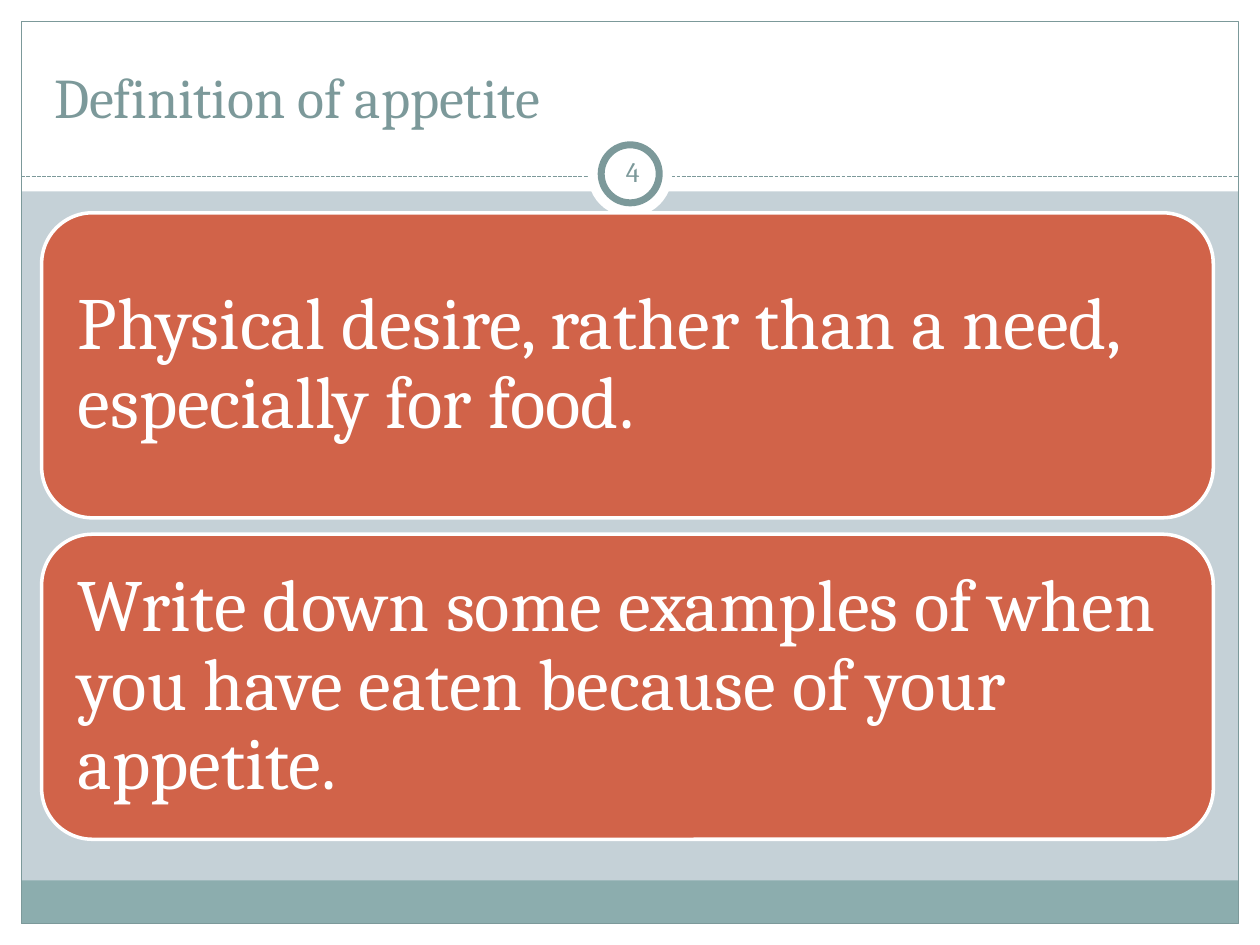
from lxml import etree
from pptx import Presentation
from pptx.dml.color import RGBColor
from pptx.enum.dml import MSO_LINE
from pptx.enum.shapes import MSO_CONNECTOR, MSO_SHAPE
from pptx.enum.text import MSO_ANCHOR, MSO_AUTO_SIZE, PP_ALIGN
from pptx.oxml.ns import qn
from pptx.util import Cm, Pt

RECT, OVAL, ROUNDED = MSO_SHAPE.RECTANGLE, MSO_SHAPE.OVAL, MSO_SHAPE.ROUNDED_RECTANGLE
LEFT, CENTER = PP_ALIGN.LEFT, PP_ALIGN.CENTER
MIDDLE, BOTTOM = MSO_ANCHOR.MIDDLE, MSO_ANCHOR.BOTTOM

FONT = "Cambria"
COLORS = {
    "background": "C5D1D7",
    "white": "FFFFFF",
    "teal": "7C999A",
    "footer": "8CADAE",
    "card": "D16349",
}
WIDTH, HEIGHT, MARGIN = 25.4, 19.05, 0.43
CARD_TOP, CARD_HEIGHT, CARD_PITCH = 4.29, 6.15, 6.48
CARDS = [
    "Physical desire, rather than a need, especially for food.",
    "Write down some examples of when you have eaten because of your appetite.",
]


def color(name):
    return RGBColor.from_string(COLORS[name])


def add_shape(s, kind, x, y, w, h, fill=None, line=None, line_width=0.75):
    sp = s.shapes.add_shape(kind, Cm(x), Cm(y), Cm(w), Cm(h))
    sp.shadow.inherit = False
    if fill:
        sp.fill.solid()
        sp.fill.fore_color.rgb = color(fill)
    else:
        sp.fill.background()
    if line:
        sp.line.color.rgb = color(line)
        sp.line.width = Pt(line_width)
    else:
        sp.line.fill.background()
    return sp


def set_text(sp, text, size, font_color, align=LEFT, anchor=MIDDLE,
             inset=None, line_spacing=None):
    tf = sp.text_frame
    tf.word_wrap = True
    tf.auto_size = MSO_AUTO_SIZE.NONE
    tf.vertical_anchor = anchor
    if inset is not None:
        tf.margin_left = tf.margin_right = Cm(inset)
        tf.margin_top = tf.margin_bottom = Cm(inset)
    p = tf.paragraphs[0]
    p.alignment = align
    if line_spacing:
        p.line_spacing = line_spacing
    r = p.add_run()
    r.text = text
    r.font.name = FONT
    r.font.size = Pt(size)
    r.font.color.rgb = color(font_color)


def add_dashed_rule(s, y):
    rule = s.shapes.add_connector(
        MSO_CONNECTOR.STRAIGHT, Cm(MARGIN), Cm(y), Cm(WIDTH - MARGIN), Cm(y))
    rule.line.color.rgb = color("teal")
    rule.line.width = Pt(0.75)
    rule.line.dash_style = MSO_LINE.SQUARE_DOT
    etree.SubElement(rule.element.spPr, qn("a:effectLst"))


def add_frame(s):
    """White margins and header, footer band, outline and dashed rule."""
    inner_w = WIDTH - 2 * MARGIN
    for x, y, w, h in [
        (0, HEIGHT - MARGIN, WIDTH, MARGIN),
        (0, 0, WIDTH, 3.86),
        (0, 0, MARGIN, HEIGHT),
        (WIDTH - MARGIN, 0, MARGIN, HEIGHT),
    ]:
        add_shape(s, RECT, x, y, w, h, fill="white")
    add_shape(s, RECT, MARGIN, 17.75, inner_w, 0.87, fill="footer")
    add_shape(s, RECT, MARGIN, MARGIN, inner_w, HEIGHT - 2 * MARGIN, line="teal")
    add_dashed_rule(s, 3.56)


def add_page_badge(s, number):
    add_shape(s, OVAL, 11.85, 2.67, 1.7, 1.7, fill="white")
    add_shape(s, OVAL, 12.12, 2.92, 1.17, 1.17, fill="white", line="teal", line_width=4)
    box = s.shapes.add_textbox(Cm(12.12), Cm(2.84), Cm(1.27), Cm(1.22))
    set_text(box, number, 16, "teal", align=CENTER, inset=0.13)


def place_title(s, text):
    title = s.shapes.title
    title.left, title.top, title.width, title.height = Cm(0.84), Cm(0.64), Cm(23.7), Cm(2.1)
    set_text(title, text, 32, "teal", anchor=BOTTOM)
    # Bring the title in front of the white header
    title.element.getparent().append(title.element)


def add_card(s, y, text):
    card = add_shape(s, ROUNDED, 0.84, y, 23.62, CARD_HEIGHT,
                     fill="card", line="white", line_width=2)
    set_text(card, text, 42, "white", inset=0.43, line_spacing=0.9)


def main():
    prs = Presentation()
    prs.slide_width, prs.slide_height = Cm(WIDTH), Cm(HEIGHT)
    s = prs.slides.add_slide(prs.slide_layouts[5])
    s.background.fill.solid()
    s.background.fill.fore_color.rgb = color("background")

    add_frame(s)
    add_page_badge(s, "4")
    place_title(s, "Definition of appetite")
    for i, text in enumerate(CARDS):
        add_card(s, CARD_TOP + i * CARD_PITCH, text)

    prs.save("out.pptx")


if __name__ == "__main__":
    main()
